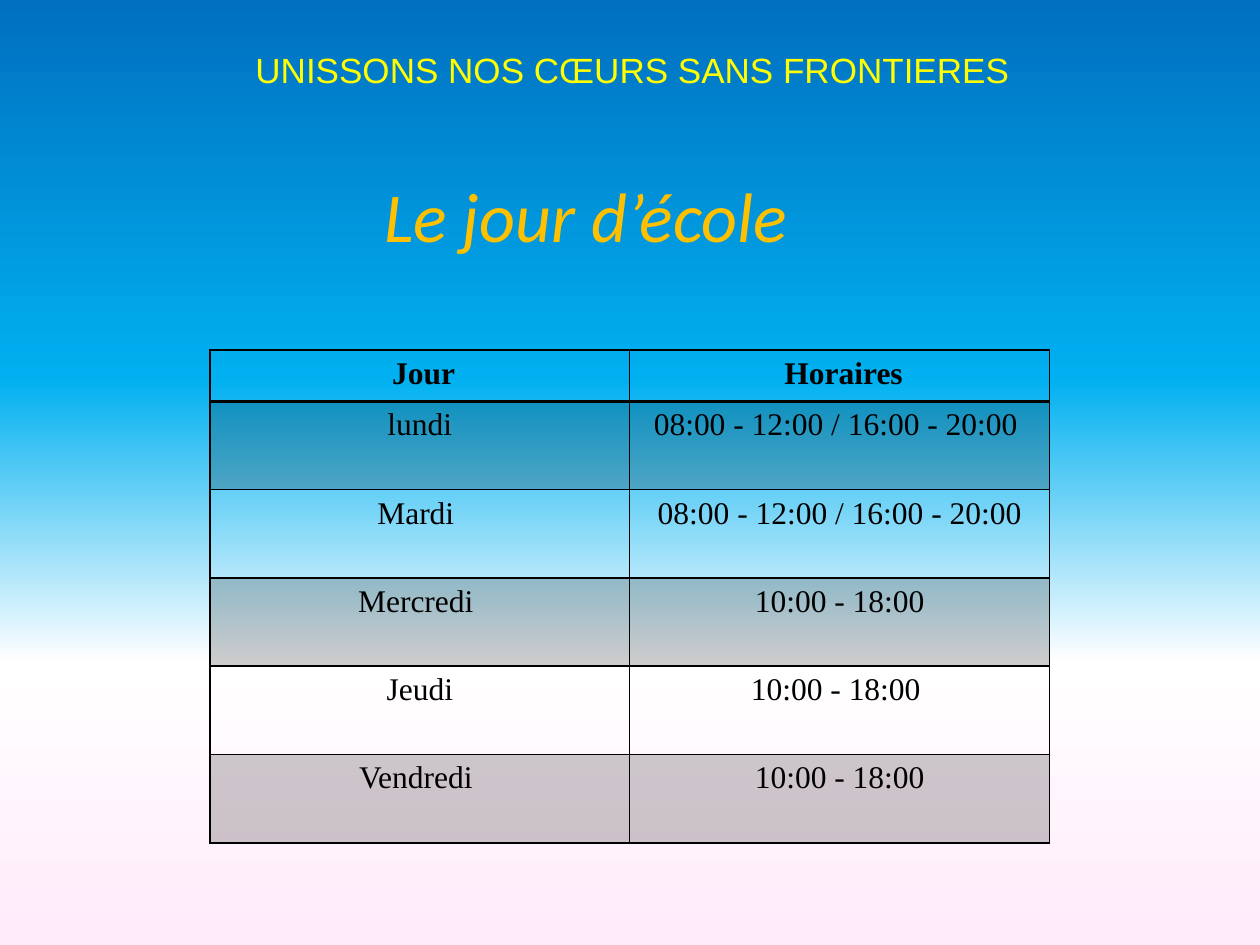
from copy import deepcopy

from lxml.etree import SubElement
from pptx import Presentation
from pptx.dml.color import RGBColor
from pptx.enum.text import MSO_ANCHOR, MSO_AUTO_SIZE, PP_ALIGN
from pptx.oxml.ns import qn
from pptx.util import Cm, Pt

BLACK = RGBColor(0x00, 0x00, 0x00)
YELLOW = RGBColor(0xFF, 0xFF, 0x00)
GOLD = RGBColor(0xFF, 0xC0, 0x00)
SKY_STOPS = [
    (0, RGBColor(0x00, 0x70, 0xC0)),
    (0.4, RGBColor(0x00, 0xB0, 0xF0)),
    (0.7, RGBColor(0xFF, 0xFF, 0xFF)),
    (1, RGBColor(0xFF, 0xEB, 0xFA)),
]
BAND_ALPHA = 20
TITLE_ONLY = 5

TIMETABLE = [
    (" Jour", " Horaires"),
    ("lundi", "08:00 - 12:00 / 16:00 - 20:00 "),
    ("Mardi ", "08:00 - 12:00 / 16:00 - 20:00"),
    ("Mercredi ", "10:00 - 18:00"),
    ("Jeudi", "10:00 - 18:00 "),
    ("Vendredi ", "10:00 - 18:00"),
]


def write_text(text_frame, text, *, font, size, color, bold=False,
               italic=False, align=PP_ALIGN.LEFT):
    paragraph = text_frame.paragraphs[0]
    paragraph.alignment = align
    run = paragraph.add_run()
    run.text = text
    run.font.name = font
    run.font.size = Pt(size)
    run.font.color.rgb = color
    run.font.bold = bold
    run.font.italic = italic


def paint_background(slide):
    fill = slide.background.fill
    fill.gradient()
    fill.gradient_angle = 270
    stop_list = slide.element.find(".//" + qn("a:gsLst"))
    while len(stop_list) < len(SKY_STOPS):
        stop_list.append(deepcopy(stop_list[0]))
    for stop, (position, color) in zip(fill.gradient_stops, SKY_STOPS):
        stop.position = position
        stop.color.rgb = color


def place_banner(slide, left, top, width, height):
    text_frame = slide.shapes.add_textbox(left, top, width, height).text_frame
    text_frame.word_wrap = True
    text_frame.auto_size = MSO_AUTO_SIZE.SHAPE_TO_FIT_TEXT
    write_text(text_frame, "UNISSONS NOS CŒURS SANS FRONTIERES",
               font="Arial", size=20, color=YELLOW)


def place_title(slide, left, top, width, height):
    title = slide.shapes.title
    title.left, title.top, title.width, title.height = left, top, width, height
    text_frame = title.text_frame
    text_frame.word_wrap = False
    text_frame.auto_size = MSO_AUTO_SIZE.SHAPE_TO_FIT_TEXT
    text_frame.vertical_anchor = MSO_ANCHOR.TOP
    write_text(text_frame, "Le jour d’école",
               font="Calibri", size=40, color=GOLD, italic=True)


def draw_borders(cell, **widths):
    properties = cell._tc.get_or_add_tcPr()
    for side in ("L", "R", "T", "B"):
        line = SubElement(properties, qn(f"a:ln{side}"),
                          w=str(Pt(widths.get(side, 1))))
        solid = SubElement(line, qn("a:solidFill"))
        SubElement(solid, qn("a:srgbClr"), val=str(BLACK))


def shade(cell):
    cell.fill.solid()
    cell.fill.fore_color.rgb = BLACK
    color = cell._tc.tcPr.find(qn("a:solidFill")).find(qn("a:srgbClr"))
    SubElement(color, qn("a:alpha"), val=str(BAND_ALPHA * 1000))


def place_timetable(slide, left, top, width, height):
    header_height = Cm(1.03)
    day_height = (height - header_height) // (len(TIMETABLE) - 1)
    table = slide.shapes.add_table(len(TIMETABLE), len(TIMETABLE[0]),
                                   left, top, width, height).table
    for row_index, values in enumerate(TIMETABLE):
        is_header = row_index == 0
        table.rows[row_index].height = header_height if is_header else day_height
        for column_index, value in enumerate(values):
            cell = table.cell(row_index, column_index)
            write_text(cell.text_frame, value, font="Times New Roman", size=18,
                       color=BLACK, bold=is_header, align=PP_ALIGN.CENTER)
            # A heavier rule separates the header from the days
            draw_borders(cell, T=2 if row_index == 1 else 1,
                         B=2 if is_header else 1)
            # Every other day is shaded
            if row_index % 2:
                shade(cell)
            else:
                cell.fill.background()


def main():
    presentation = Presentation()
    presentation.slide_width = Cm(25.4)
    presentation.slide_height = Cm(19.05)
    slide = presentation.slides.add_slide(presentation.slide_layouts[TITLE_ONLY])
    paint_background(slide)
    place_banner(slide, Cm(4.9), Cm(0.86), Cm(16.81), Cm(1.11))
    place_title(slide, Cm(7.49), Cm(3.35), Cm(8.74), Cm(1.97))
    place_timetable(slide, Cm(4.23), Cm(7.06), Cm(16.93), Cm(9.93))
    presentation.save("out.pptx")


if __name__ == "__main__":
    main()
